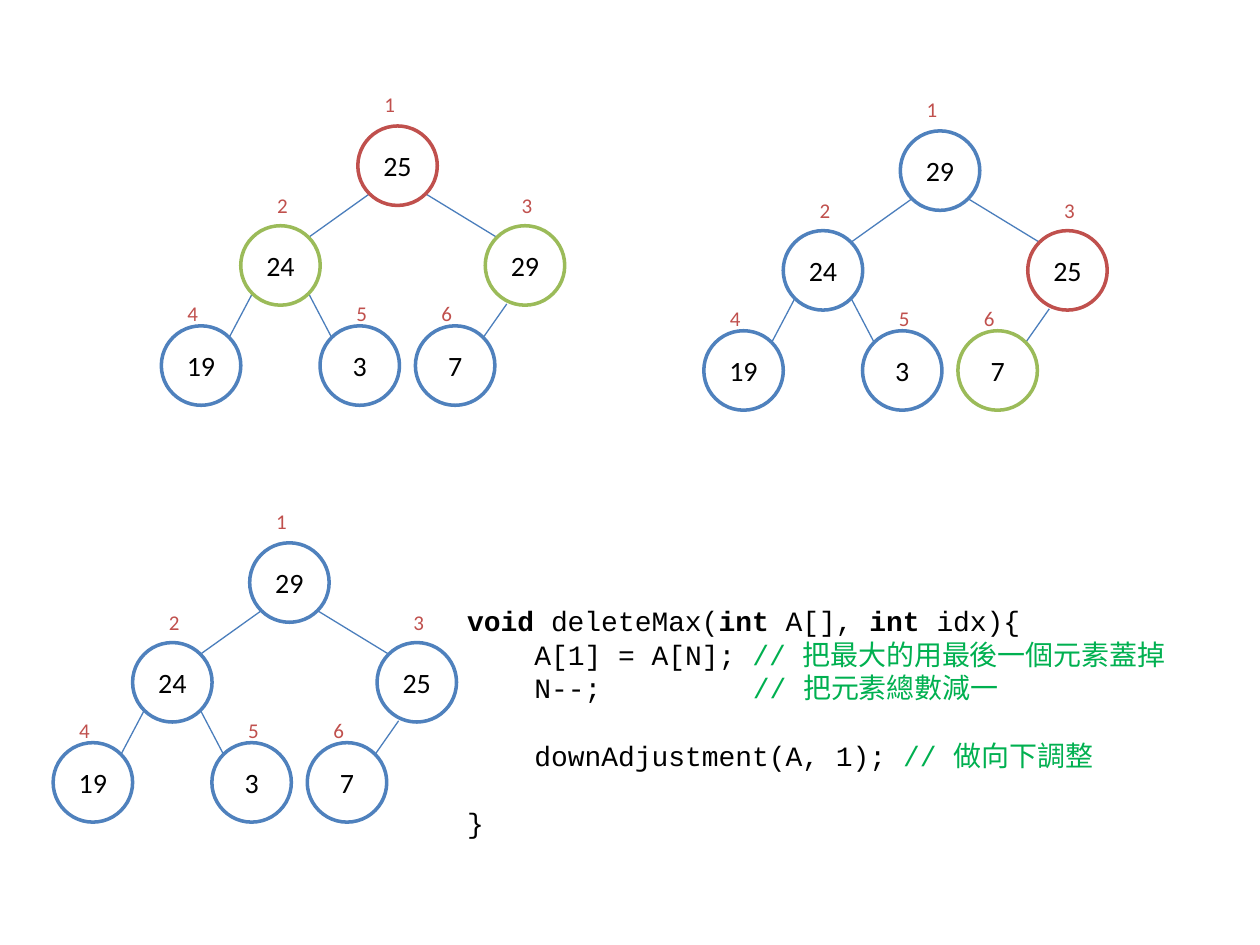
from lxml.etree import SubElement
from pptx import Presentation
from pptx.dml.color import RGBColor
from pptx.enum.shapes import MSO_CONNECTOR, MSO_SHAPE
from pptx.enum.text import MSO_ANCHOR, MSO_AUTO_SIZE, PP_ALIGN
from pptx.oxml.ns import qn
from pptx.util import Pt

COLORS = {
    "paper": "FFFFFF", "ink": "000000", "edge": "4B7EBC",
    "blue": "4F81BD", "red": "C0504D", "green": "9BBB59",
    "comment": "00B050",
}
DIAMETER = 45.4
CORNER = DIAMETER / 2 * 0.71  # offset of the 45 degree point on a circle
LEVEL_TOPS = (23, 80, 137.2)
# Heap index: (left, level, label shift right, label rise)
NODES = {
    1: (112.3, 0, 8, 23),
    2: (45.4, 1, 13.7, 22.5),
    3: (185.1, 1, 13.7, 22.5),
    4: (0, 2, 7.8, 17.8),
    5: (90.7, 2, 13.7, 17.8),
    6: (145.2, 2, 7.8, 17.8),
}
# Box left and top, values in heap order, outline colours in heap order
TREES = [
    (92.2, 49, (25, 24, 29, 19, 3, 7),
     ("red", "green", "green", "blue", "blue", "blue")),
    (402.2, 51.8, (29, 24, 25, 19, 3, 7),
     ("blue", "blue", "red", "blue", "blue", "green")),
    (30.4, 287.2, (29, 24, 25, 19, 3, 7), ("blue",) * 6),
]

CHARACTER = 9.6  # advance of 16 pt Courier New
TAB_STOPS = (4 * CHARACTER, 17 * CHARACTER)
KEYWORD = {"bold": True, "color": "ink"}
PLAIN = {"bold": False, "color": "ink"}
COMMENT = {"bold": False, "color": "comment"}
# Space before the line, then its spans
CODE = [
    (0, [("void ", KEYWORD), ("deleteMax(", PLAIN), ("int", KEYWORD),
         (" A[], ", PLAIN), ("int ", KEYWORD), ("idx){", PLAIN)]),
    (0, [("\tA[1] = A[N]; ", PLAIN), ("// 把最大的用最後一個元素蓋掉", COMMENT)]),
    (0, [("\tN--;\t", PLAIN), ("// 把元素總數減一", COMMENT)]),
    (19.3, [("\tdownAdjustment(A, 1); ", PLAIN), ("// 做向下調整", COMMENT)]),
    (19.3, [("}", PLAIN)]),
]


def rgb(name):
    return RGBColor.from_string(COLORS[name])


def add_span(para, text, size, color, name="Calibri", bold=False):
    span = para.add_run()
    span.text = text
    for key, value in {"name": name, "size": Pt(size), "bold": bold}.items():
        setattr(span.font, key, value)
    span.font.color.rgb = rgb(color)


def node_center(index):
    left, level, _, _ = NODES[index]
    return left + DIAMETER / 2, LEVEL_TOPS[level] + DIAMETER / 2


def add_edge(shapes, left, top, child):
    parent = child // 2
    parent_x, parent_y = node_center(parent)
    child_x, child_y = node_center(child)
    side = 1 if child_x > parent_x else -1
    # The edge to the last node leaves its parent nearer to the bottom
    start_x, start_y = (10.4, 22) if child == 6 else (CORNER, CORNER)
    edge = shapes.add_connector(
        MSO_CONNECTOR.STRAIGHT,
        Pt(left + parent_x + side * start_x), Pt(top + parent_y + start_y),
        Pt(left + child_x - side * CORNER), Pt(top + child_y - CORNER))
    edge.line.color.rgb = rgb("edge")
    edge.line.width = Pt(0.75)
    SubElement(edge.element.spPr, qn("a:effectLst"))


def add_node(shapes, left, top, value, color):
    node = shapes.add_shape(MSO_SHAPE.OVAL, Pt(left), Pt(top),
                            Pt(DIAMETER), Pt(DIAMETER))
    node.shadow.inherit = False
    node.fill.solid()
    node.fill.fore_color.rgb = rgb("paper")
    node.line.color.rgb = rgb(color)
    node.line.width = Pt(2)
    node.text_frame.vertical_anchor = MSO_ANCHOR.MIDDLE
    para = node.text_frame.paragraphs[0]
    para.alignment = PP_ALIGN.CENTER
    add_span(para, str(value), 16, "ink")


def add_index_label(shapes, left, top, index):
    box = shapes.add_textbox(Pt(left), Pt(top), Pt(20.7), Pt(21.8))
    box.text_frame.word_wrap = False
    box.text_frame.auto_size = MSO_AUTO_SIZE.SHAPE_TO_FIT_TEXT
    add_span(box.text_frame.paragraphs[0], str(index), 12, "red")


def add_tree(page, left, top, values, colors):
    shapes = page.shapes.add_group_shape().shapes
    for child in range(2, len(values) + 1):
        add_edge(shapes, left, top, child)
    for index, value, color in zip(NODES, values, colors):
        node_left, level, shift, rise = NODES[index]
        x, y = left + node_left, top + LEVEL_TOPS[level]
        add_node(shapes, x, y, value, color)
        add_index_label(shapes, x + shift, y - rise, index)


def add_code(page, left, top, width, height):
    box = page.shapes.add_textbox(Pt(left), Pt(top), Pt(width), Pt(height))
    frame = box.text_frame
    frame.word_wrap = True
    frame.margin_top = Pt(23.1)
    for number, (gap, spans) in enumerate(CODE):
        para = frame.add_paragraph() if number else frame.paragraphs[0]
        para.space_before = Pt(gap)
        tabs = SubElement(para._p.get_or_add_pPr(), qn("a:tabLst"))
        for stop in TAB_STOPS:
            SubElement(tabs, qn("a:tab"), pos=str(Pt(stop)), algn="l")
        for text, style in spans:
            add_span(para, text, 16, name="Courier New", **style)


def main():
    deck = Presentation()
    deck.slide_width, deck.slide_height = Pt(720), Pt(540)
    page = deck.slides.add_slide(deck.slide_layouts[6])
    for tree in TREES:
        add_tree(page, *tree)
    add_code(page, 259.9, 321.8, 533.5, 181.4)
    deck.save("out.pptx")


if __name__ == "__main__":
    main()
